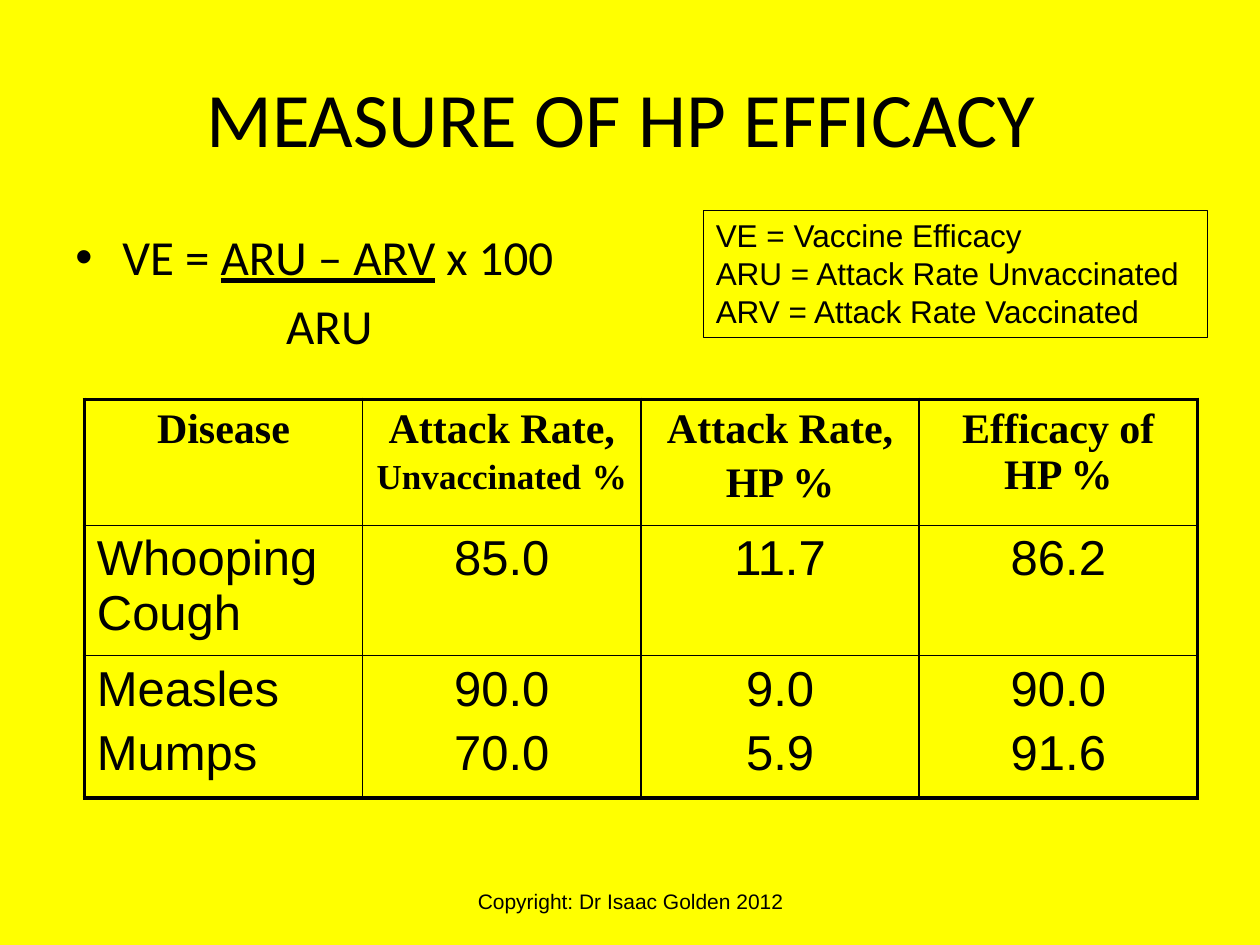
import pptx
import pptx.dml.color
import pptx.enum.shapes
import pptx.enum.text
import pptx.oxml
import pptx.oxml.ns
import pptx.util
from pptx.util import Cm, Pt

ALIGN = pptx.enum.text.PP_ALIGN
ANCHOR = pptx.enum.text.MSO_ANCHOR
BLACK = "000000"


def color(hex_string):
    return pptx.dml.color.RGBColor.from_string(hex_string)


def write(text_frame, lines, size, font="Arial", align=ALIGN.LEFT, bold=False, gap=0.2):
    """Fill a frame; each line is a list of runs, gap is a share of the font size."""
    text_frame.word_wrap = True
    for index, pieces in enumerate(lines):
        paragraph = text_frame.paragraphs[0] if index == 0 else text_frame.add_paragraph()
        paragraph.alignment = align
        paragraph.space_before = Pt(size * gap if index else 0)
        for piece in pieces:
            run = paragraph.add_run()
            run.text = piece
            run.font.name = font
            run.font.size = Pt(size)
            run.font.bold = bold
            run.font.color.rgb = color(BLACK)


presentation = pptx.Presentation()
presentation.slide_width = Cm(25.4)
presentation.slide_height = Cm(19.05)
slide = presentation.slides.add_slide(presentation.slide_layouts[5])
slide.background.fill.solid()
slide.background.fill.fore_color.rgb = color("FFFF00")

# Title
title = slide.shapes.title
title.left, title.top, title.width, title.height = Cm(1.27), Cm(0.76), Cm(22.86), Cm(3.18)
title.text_frame.vertical_anchor = ANCHOR.MIDDLE
write(title.text_frame, [["MEASURE OF HP EFFICACY "]], 44, "Calibri", ALIGN.CENTER)

# Formula: the denominator is indented to sit under the underlined numerator
formula = slide.shapes.add_textbox(Cm(1.27), Cm(4.45), Cm(12.5), Cm(2.97))
write(formula.text_frame, [["VE = ", "ARU – ARV", " x 100"], ["ARU"]], 28, "Calibri")
numerator_line, denominator_line = formula.text_frame.paragraphs
numerator_line.runs[1].font.underline = True
bullet_properties = numerator_line._p.get_or_add_pPr()
bullet_properties.set("marL", str(Cm(0.95)))
bullet_properties.set("indent", str(-Cm(0.95)))
for tag, attribute, value in (("a:buFont", "typeface", "Arial"), ("a:buChar", "char", "•")):
    element = pptx.oxml.parse_xml(f"<{tag} {pptx.oxml.ns.nsdecls('a')}/>")
    element.set(attribute, value)
    bullet_properties.append(element)
denominator_line._p.get_or_add_pPr().set("marL", str(Cm(4.25)))

# Table of attack rates
header = [
    [["Disease"]],
    [["Attack Rate, ", "Unvaccinated", " ", "%"]],
    [["Attack Rate,"], ["HP %"]],
    [["Efficacy of HP %"]],
]
body = [
    [[["Whooping Cough"]], [["85.0"]], [["11.7"]], [["86.2"]]],
    [[["Measles"], ["Mumps"]], [["90.0"], ["70.0"]], [["9.0"], ["5.9"]], [["90.0"], ["91.6"]]],
]
rows = [header] + body
row_heights = [2.54, 2.62, 2.87]
column_width = 5.61
table = slide.shapes.add_table(
    len(rows), len(header), Cm(1.7), Cm(8.05),
    Cm(column_width * len(header)), Cm(sum(row_heights))).table
table.first_row = False
table.horz_banding = False
for column in table.columns:
    column.width = Cm(column_width)

last_row, last_column = len(rows) - 1, len(header) - 1
for row_index, cells in enumerate(rows):
    table.rows[row_index].height = Cm(row_heights[row_index])
    for column_index, lines in enumerate(cells):
        cell = table.cell(row_index, column_index)
        if row_index == 0:
            write(cell.text_frame, lines, 24, "Times New Roman", ALIGN.CENTER, bold=True)
        else:
            write(cell.text_frame, lines, 28,
                  align=ALIGN.CENTER if column_index else ALIGN.LEFT)
        outer_edges = {
            "lnL": column_index == 0,
            "lnR": column_index == last_column,
            "lnT": row_index == 0,
            "lnB": row_index == last_row,
        }
        for edge, is_outer in outer_edges.items():
            cell._tc.get_or_add_tcPr().append(pptx.oxml.parse_xml(
                f'<a:{edge} {pptx.oxml.ns.nsdecls("a")} w="{Pt(2.25 if is_outer else 1)}">'
                f'<a:solidFill><a:srgbClr val="{BLACK}"/></a:solidFill></a:{edge}>'))
        cell.fill.background()
unvaccinated_runs = table.cell(0, 1).text_frame.paragraphs[0].runs
for run in (unvaccinated_runs[1], unvaccinated_runs[3]):
    run.font.size = Pt(20)

# Legend of abbreviations
legend = slide.shapes.add_shape(
    pptx.enum.shapes.MSO_SHAPE.RECTANGLE, Cm(14.18), Cm(4.24), Cm(10.16), Cm(2.57))
legend.shadow.inherit = False
legend.fill.background()
legend.line.color.rgb = color(BLACK)
legend.line.width = Pt(0.75)
legend.text_frame.vertical_anchor = ANCHOR.TOP
write(legend.text_frame, [
    ["VE = Vaccine Efficacy"],
    ["ARU = Attack Rate Unvaccinated"],
    ["ARV = Attack Rate Vaccinated"],
], 18, gap=0)

# Footer
footer = slide.shapes.add_textbox(Cm(8.69), Cm(17.65), Cm(8.05), Cm(1.02))
footer.text_frame.vertical_anchor = ANCHOR.MIDDLE
write(footer.text_frame, [["Copyright: Dr Isaac Golden 2012"]], 12, align=ALIGN.CENTER)

presentation.save("out.pptx")
